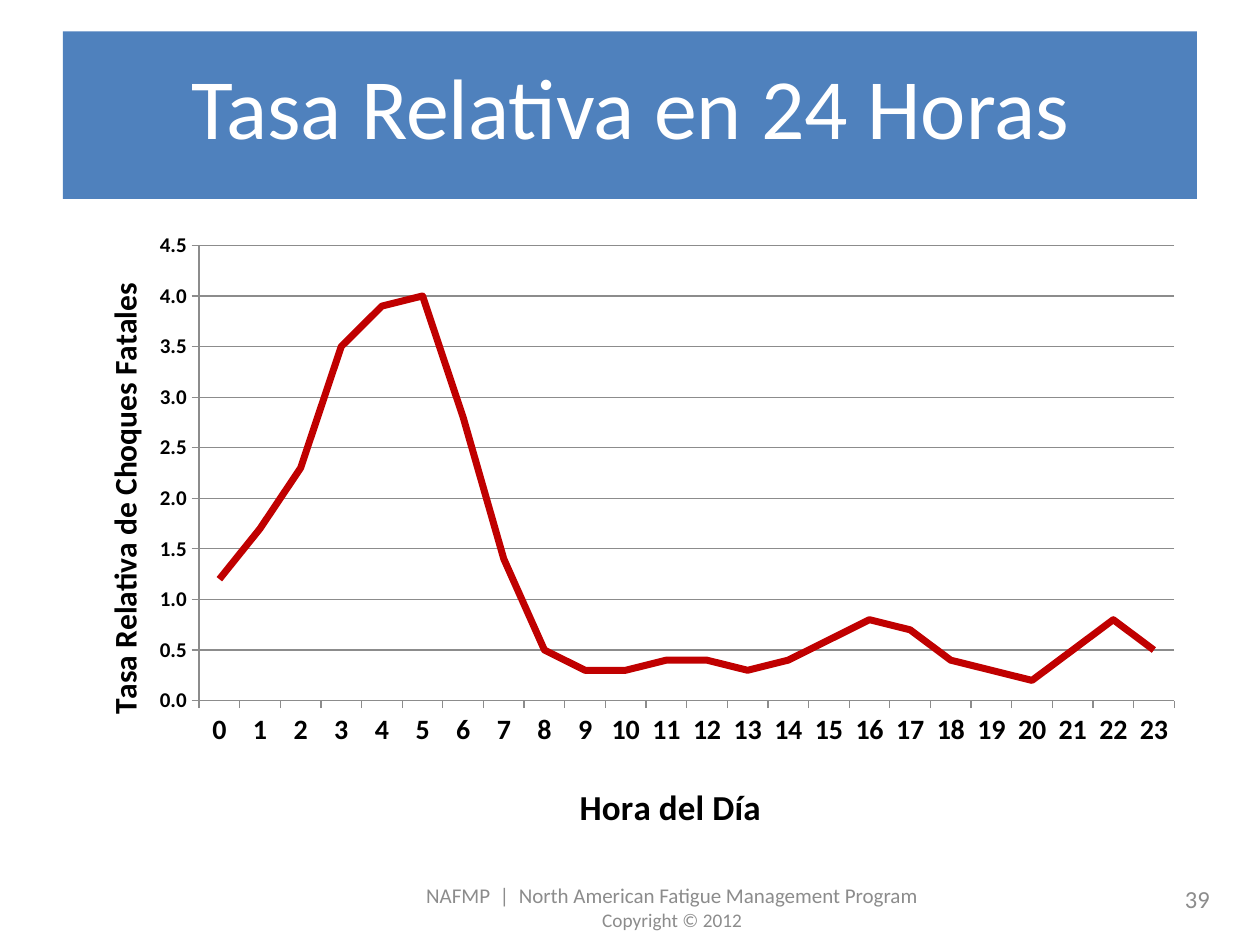
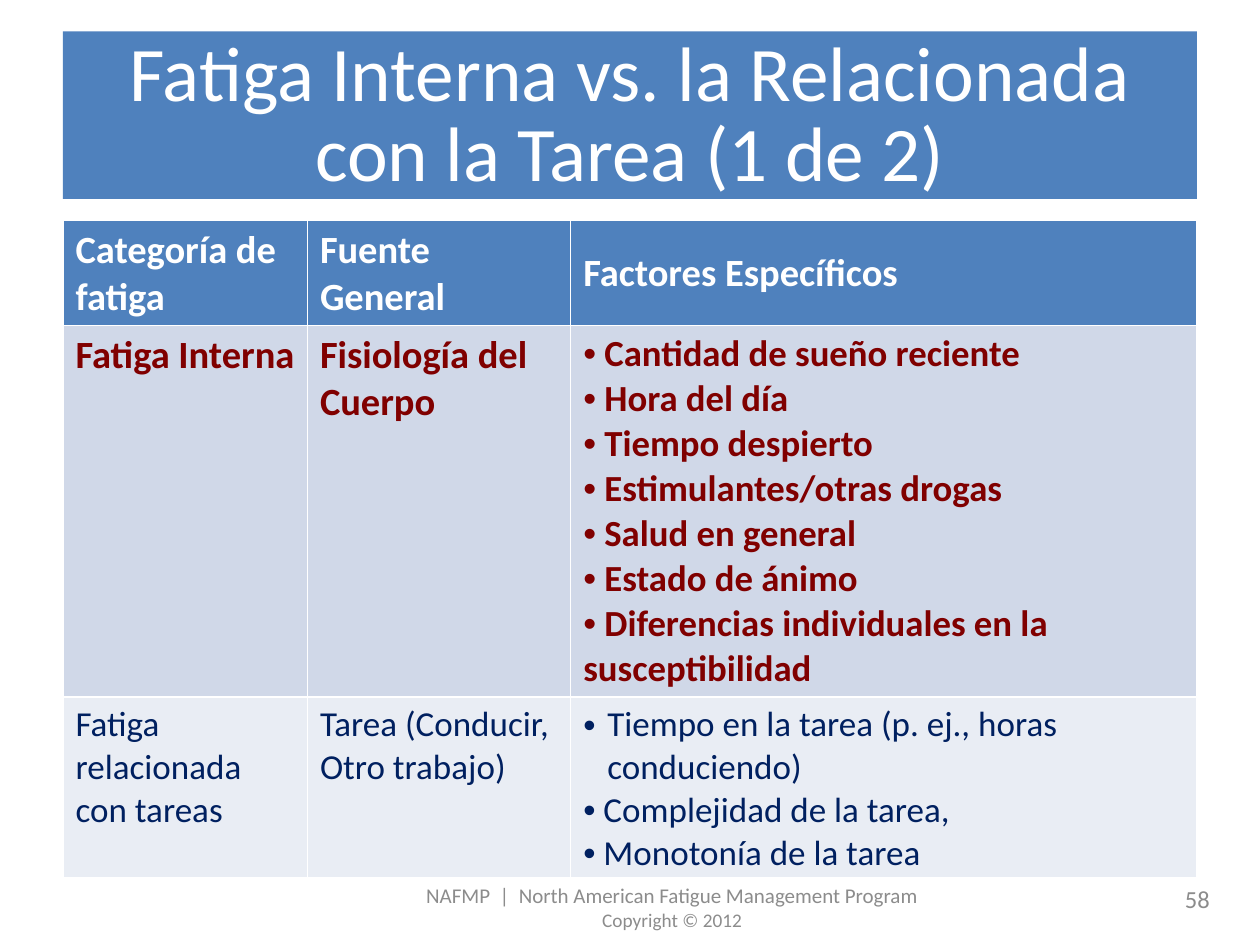
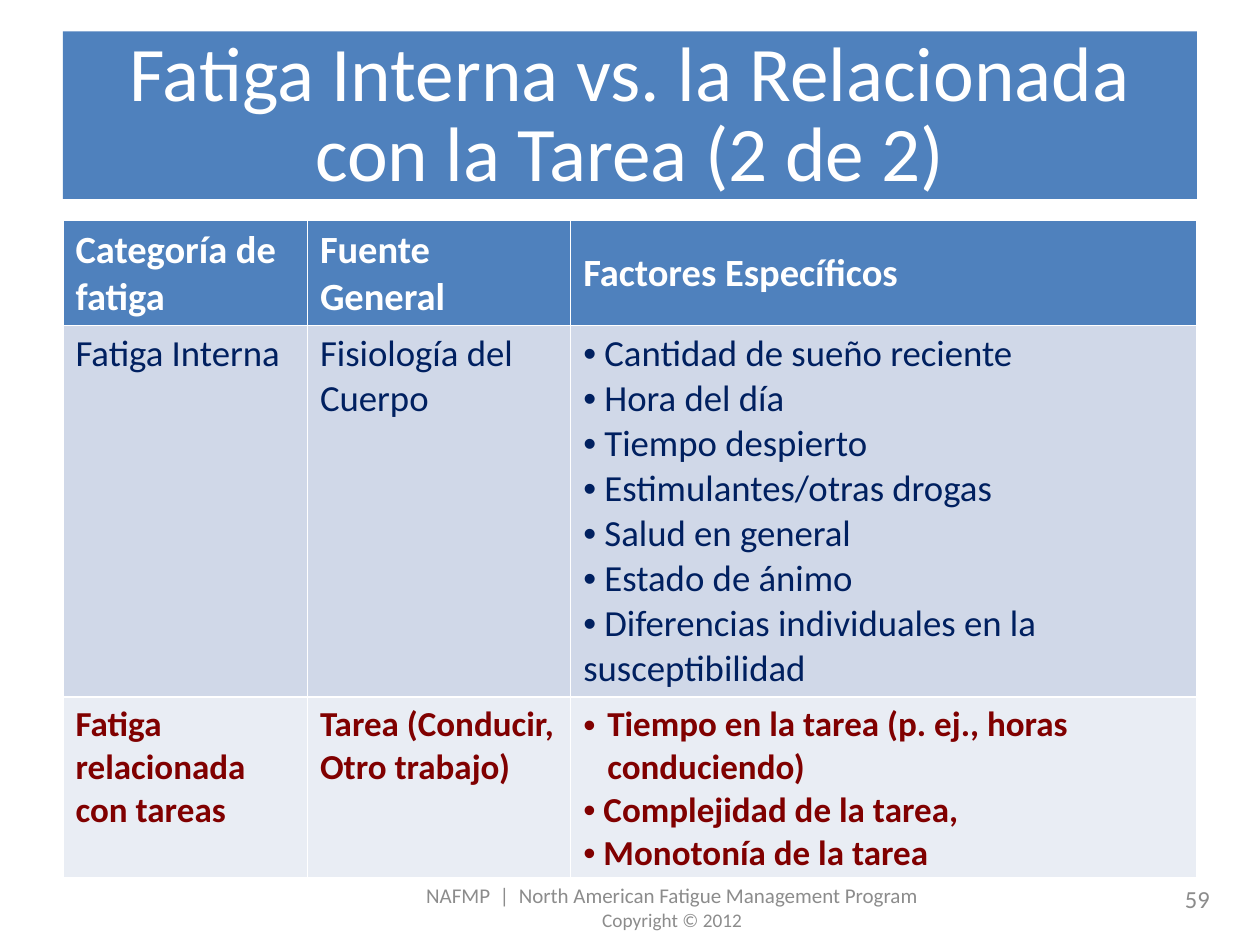
from lxml.etree import SubElement
from pptx import Presentation
from pptx.chart.data import CategoryChartData
from pptx.dml.color import RGBColor
from pptx.enum.chart import XL_CHART_TYPE, XL_TICK_MARK
from pptx.enum.shapes import MSO_SHAPE
from pptx.enum.text import MSO_ANCHOR, MSO_AUTO_SIZE, PP_ALIGN
from pptx.oxml import parse_xml
from pptx.oxml.ns import nsdecls, qn
from pptx.util import Inches, Pt

BLUE, WHITE, GRAY, BLACK = "4F81BD", "FFFFFF", "8C8C8C", "000000"
NAVY, RED, WINE = "002060", "C00000", "800000"
TINTS = ["D0D8E8", "E9EDF4"]
RATES = [1.2, 1.7, 2.3, 3.5, 3.9, 4, 2.8, 1.4, 0.5, 0.3, 0.3, 0.4,
         0.4, 0.3, 0.4, 0.6, 0.8, 0.7, 0.4, 0.3, 0.2, 0.5, 0.8, 0.5]
HEADS = ["Categoría de fatiga", "Fuente General", "Factores Específicos"]
ROWS = [
    ["Fatiga Interna", "Fisiología del Cuerpo",
     " Cantidad de sueño reciente\n Hora del día\n Tiempo despierto\n"
     " Estimulantes/otras drogas\n Salud en general\n Estado de ánimo\n"
     " Diferencias individuales en la susceptibilidad"],
    ["Fatiga relacionada con tareas", "Tarea (Conducir,\nOtro trabajo)",
     "Tiempo en la tarea (p. ej., horas conduciendo)\n"
     " Complejidad de la tarea,\n Monotonía de la tarea"],
]


def color(code):
    return RGBColor.from_string(code)


def style(font, size, code, bold=False):
    font.name, font.size, font.bold = "Calibri", Pt(size), bold
    font.color.rgb = color(code)


def place(node, inner=False, **spots):
    old = node.find(qn("c:layout"))
    if old is not None:
        node.remove(old)
    parts = [("layoutTarget", "inner")] if inner else []
    parts += [("xMode", "edge"), ("yMode", "edge"), *spots.items()]
    body = "".join(f'<c:{name} val="{val}"/>' for name, val in parts)
    layout = parse_xml(f'<c:layout {nsdecls("c")}><c:manualLayout>{body}'
                       '</c:manualLayout></c:layout>')
    node.insert(0 if node.find(qn("c:tx")) is None else 1, layout)


class Deck:
    """Holds the shared style and the current slide."""

    def __init__(self):
        self.prs = Presentation()
        self.prs.slide_width, self.prs.slide_height = Inches(10), Inches(7.5)

    def start(self, title, number, size):
        self.slide = self.prs.slides.add_slide(self.prs.slide_layouts[5])
        self.shapes = self.slide.shapes
        self.band()
        self.title(title, size)
        foot = "NAFMP  |  North American Fatigue Management Program\nCopyright © 2012"
        self.text(foot, (3, 7, 4.67, 0.4), [12, 11], PP_ALIGN.CENTER)
        self.text(str(number), (7.37, 6.93, 2.33, 0.4), [14], PP_ALIGN.RIGHT)

    def band(self):
        band = self.shapes.add_shape(MSO_SHAPE.RECTANGLE, Inches(0.5), Inches(0.25),
                                     Inches(9), Inches(1.33))
        band.shadow.inherit = False
        band.fill.solid()
        band.fill.fore_color.rgb = color(BLUE)
        band.line.fill.background()
        self.shapes.title._element.addprevious(band._element)

    def title(self, text, size):
        title = self.shapes.title
        title.left, title.top = Inches(0.5), Inches(0.3)
        title.width, title.height = Inches(9), Inches(1.25)
        frame = title.text_frame
        frame.text = text
        frame.auto_size = MSO_AUTO_SIZE.NONE
        frame.vertical_anchor = MSO_ANCHOR.MIDDLE
        line = frame.paragraphs[0]
        line.alignment, line.line_spacing = PP_ALIGN.CENTER, Pt(45.8)
        style(line.runs[0].font, size, WHITE)

    def text(self, text, spot, sizes, align):
        frame = self.shapes.add_textbox(*map(Inches, spot)).text_frame
        frame.word_wrap = True
        frame.vertical_anchor = MSO_ANCHOR.MIDDLE
        frame.text = text
        for line, size in zip(frame.paragraphs, sizes):
            line.alignment = align
            style(line.runs[0].font, size, GRAY)

    def chart(self):
        data = CategoryChartData(number_format="0.0")
        data.categories = [str(hour) for hour in range(24)]
        data.add_series("Series 1", RATES)
        chart = self.shapes.add_chart(XL_CHART_TYPE.LINE, Inches(0.5), Inches(1.75),
                                      Inches(9), Inches(4.95), data).chart
        chart.has_legend = chart.has_title = False
        style(chart.font, 10, BLACK)
        plot = chart.plots[0]
        plot.vary_by_categories = False
        line = plot.series[0]
        line.smooth = False
        line.format.line.color.rgb = color(RED)
        line.format.line.width = Pt(4)
        place(chart._chartSpace.chart.plotArea, True, x=0.12, y=0.04, w=0.86, h=0.73)
        self.axis(chart.category_axis, "Hora del Día", 20, 16, x=0.45, y=0.89)
        axis = chart.value_axis
        self.axis(axis, "Tasa Relativa de Choques Fatales ", 18, 12, x=0.03, y=0.08)
        axis.minimum_scale, axis.maximum_scale, axis.major_unit = 0, 4.5, 0.5
        axis.tick_labels.number_format = "0.0"
        axis.tick_labels.number_format_is_linked = False
        axis.major_gridlines.format.line.color.rgb = color(GRAY)

    def axis(self, axis, text, size, small, **spot):
        frame = axis.axis_title.text_frame
        frame.text = text
        style(frame.paragraphs[0].runs[0].font, size, BLACK, True)
        place(axis.axis_title._element, **spot)
        style(axis.tick_labels.font, small, BLACK, True)
        axis.major_tick_mark = XL_TICK_MARK.OUTSIDE
        axis.format.line.color.rgb = color(GRAY)

    def table(self, focus):
        table = self.shapes.add_table(3, 3, Inches(0.5), Inches(1.75),
                                      Inches(9), Inches(5.18)).table
        for col, width in zip(table.columns, [1.94, 2.09, 4.97]):
            col.width = Inches(width)
        for row, height in zip(table.rows, [0.83, 2.95, 1.4]):
            row.height = Inches(height)
        for col, head in enumerate(HEADS):
            cell = table.cell(0, col)
            cell.vertical_anchor = MSO_ANCHOR.MIDDLE
            self.cell(cell, head, BLUE, 22, WHITE, True)
        for row, texts in enumerate(ROWS):
            bold = row == focus
            for col, text in enumerate(texts):
                size = 22 if bold and row == 0 and col < 2 else 21 - row
                self.cell(table.cell(row + 1, col), text, TINTS[row], size,
                          WINE if bold else NAVY, bold, col == 2)

    def cell(self, cell, text, fill, size, code, bold, bullet=False):
        cell.fill.solid()
        cell.fill.fore_color.rgb = color(fill)
        cell.text_frame.text = text
        for line in cell.text_frame.paragraphs:
            if bullet:
                self.bullet(line)
            style(line.runs[0].font, size, code, bold)

    def bullet(self, line):
        props = line._p.get_or_add_pPr()
        if not line.text.startswith(" "):
            props.set("marL", str(Inches(0.19)))
            props.set("indent", str(-Inches(0.19)))
        SubElement(props, qn("a:buFont"), typeface="Arial")
        SubElement(props, qn("a:buChar"), char="•")


def main():
    deck = Deck()
    deck.start("Tasa Relativa en 24 Horas", 39, 49)
    deck.chart()
    for part in range(2):
        deck.start("Fatiga Interna vs. la Relacionada con la Tarea "
                   f"({part + 1} de 2)", 58 + part, 44.1)
        deck.table(part)
    deck.prs.save("out.pptx")


if __name__ == "__main__":
    main()
